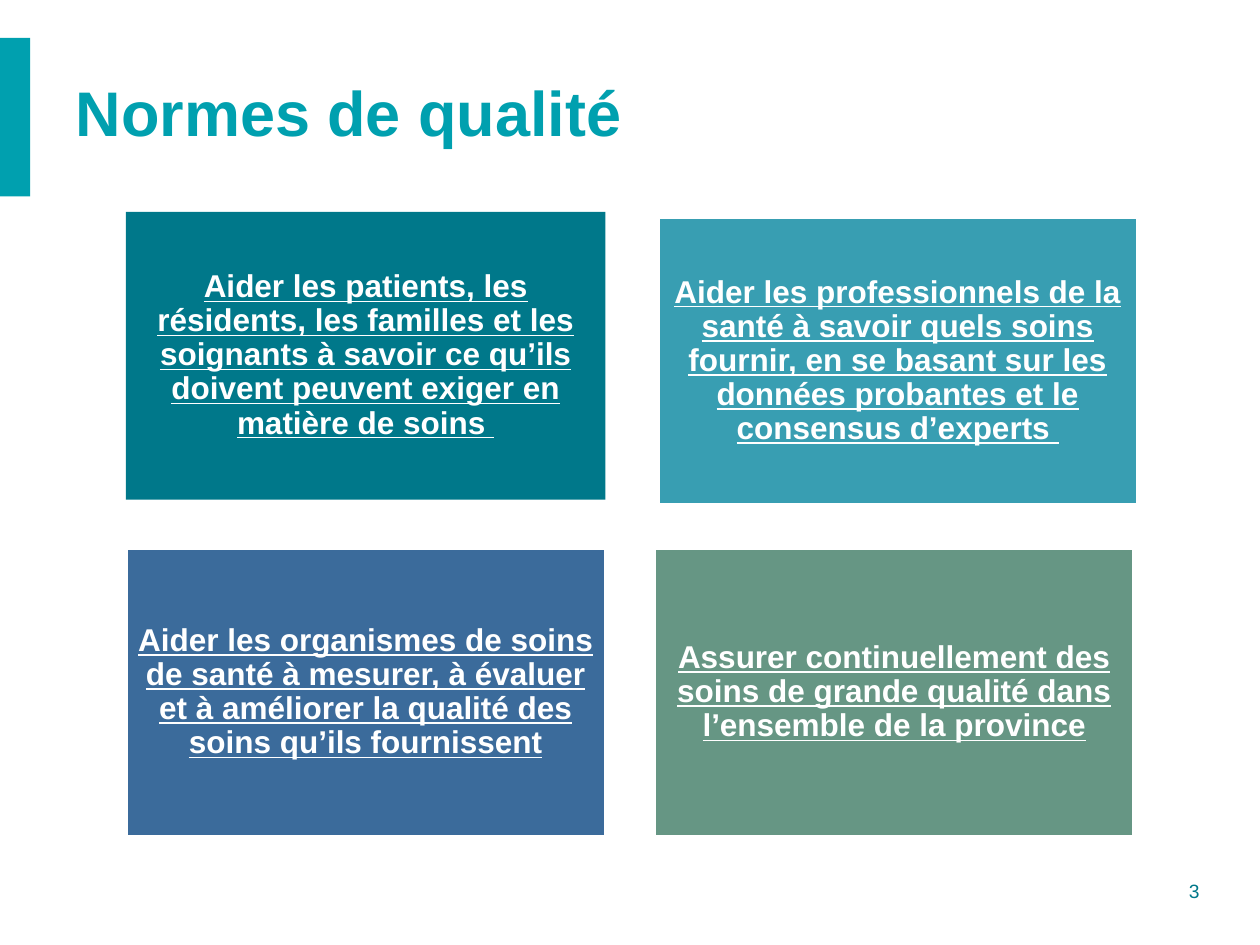
from pptx import Presentation
from pptx.dml.color import RGBColor
from pptx.enum import shapes, text
from pptx.util import Pt

# Content: each card is (left, top, fill, outlined, runs of (text, bold))
TITLE = "Normes de qualité"
PAGE_NUMBER = "3"
CARDS = [
    (72, 121, "00788A", False, [
        ("Aider les patients, les résidents, les familles et les soignants à savoir "
         "ce qu’ils doivent peuvent exiger en matière de soins ", True)]),
    (376, 124, "389EB2", True, [
        ("Aider les professionnels de la santé à savoir quels soins fournir, en se "
         "basant sur les données probantes et le consensus d’experts", True),
        (" ", False)]),
    (72, 313.5, "3B6B9B", True, [
        ("Aider les organismes de soins de santé à mesurer, à évaluer et à améliorer "
         "la qualité des soins qu’ils fournissent", True)]),
    (374, 313.5, "669684", True, [
        ("Assurer continuellement des soins de grande qualité dans l’ensemble de la "
         "province", True)]),
]

CARD_WIDTH, CARD_HEIGHT, CARD_INSET = 274, 164.5, 5
THEME = {
    "font": "Arial",
    "accent": "00A0AF", "number": "00788A", "white": "FFFFFF",
    "title_size": 36, "card_size": 18, "number_size": 11,
    "outline": 2,
}


def add_run(paragraph, words, size, color, bold=False, underline=False):
    run = paragraph.add_run()
    run.text = words
    font = run.font
    font.name, font.size = THEME["font"], Pt(size)
    font.bold, font.underline = bold, underline
    font.color.rgb = RGBColor.from_string(color)


def add_rectangle(slide, left, top, width, height, fill, outlined=False):
    shape = slide.shapes.add_shape(shapes.MSO_SHAPE.RECTANGLE,
                                   Pt(left), Pt(top), Pt(width), Pt(height))
    shape.shadow.inherit = False
    shape.fill.solid()
    shape.fill.fore_color.rgb = RGBColor.from_string(fill)
    if outlined:
        shape.line.color.rgb = RGBColor.from_string(THEME["white"])
        shape.line.width = Pt(THEME["outline"])
    else:
        shape.line.fill.background()
    return shape


def add_card(slide, left, top, fill, outlined, runs):
    card = add_rectangle(slide, left, top, CARD_WIDTH, CARD_HEIGHT, fill, outlined)
    frame = card.text_frame
    frame.word_wrap = True
    frame.vertical_anchor = text.MSO_ANCHOR.MIDDLE
    frame.margin_left = frame.margin_right = Pt(CARD_INSET)
    frame.margin_top = frame.margin_bottom = Pt(CARD_INSET)
    paragraph = frame.paragraphs[0]
    paragraph.alignment = text.PP_ALIGN.CENTER
    paragraph.line_spacing = 0.9
    for words, bold in runs:
        add_run(paragraph, words, THEME["card_size"], THEME["white"], bold, True)


def main():
    presentation = Presentation()
    presentation.slide_width, presentation.slide_height = Pt(720), Pt(540)
    slide = presentation.slides.add_slide(presentation.slide_layouts[5])

    # Accent bar at the left edge
    add_rectangle(slide, 0, 21.6, 17.3, 90.7, THEME["accent"])

    # Title
    title = slide.shapes.title
    title.left, title.top, title.width, title.height = Pt(36), Pt(36), Pt(562.3), Pt(55.4)
    title.text_frame.vertical_anchor = text.MSO_ANCHOR.MIDDLE
    paragraph = title.text_frame.paragraphs[0]
    paragraph.alignment = text.PP_ALIGN.LEFT
    add_run(paragraph, TITLE, THEME["title_size"], THEME["accent"], bold=True)

    # Four cards
    for card in CARDS:
        add_card(slide, *card)

    # Page number
    number = slide.shapes.add_textbox(Pt(608.4), Pt(499), Pt(84.2), Pt(20.9))
    number.text_frame.word_wrap = True
    paragraph = number.text_frame.paragraphs[0]
    paragraph.alignment = text.PP_ALIGN.RIGHT
    add_run(paragraph, PAGE_NUMBER, THEME["number_size"], THEME["number"])

    presentation.save("out.pptx")


if __name__ == "__main__":
    main()
